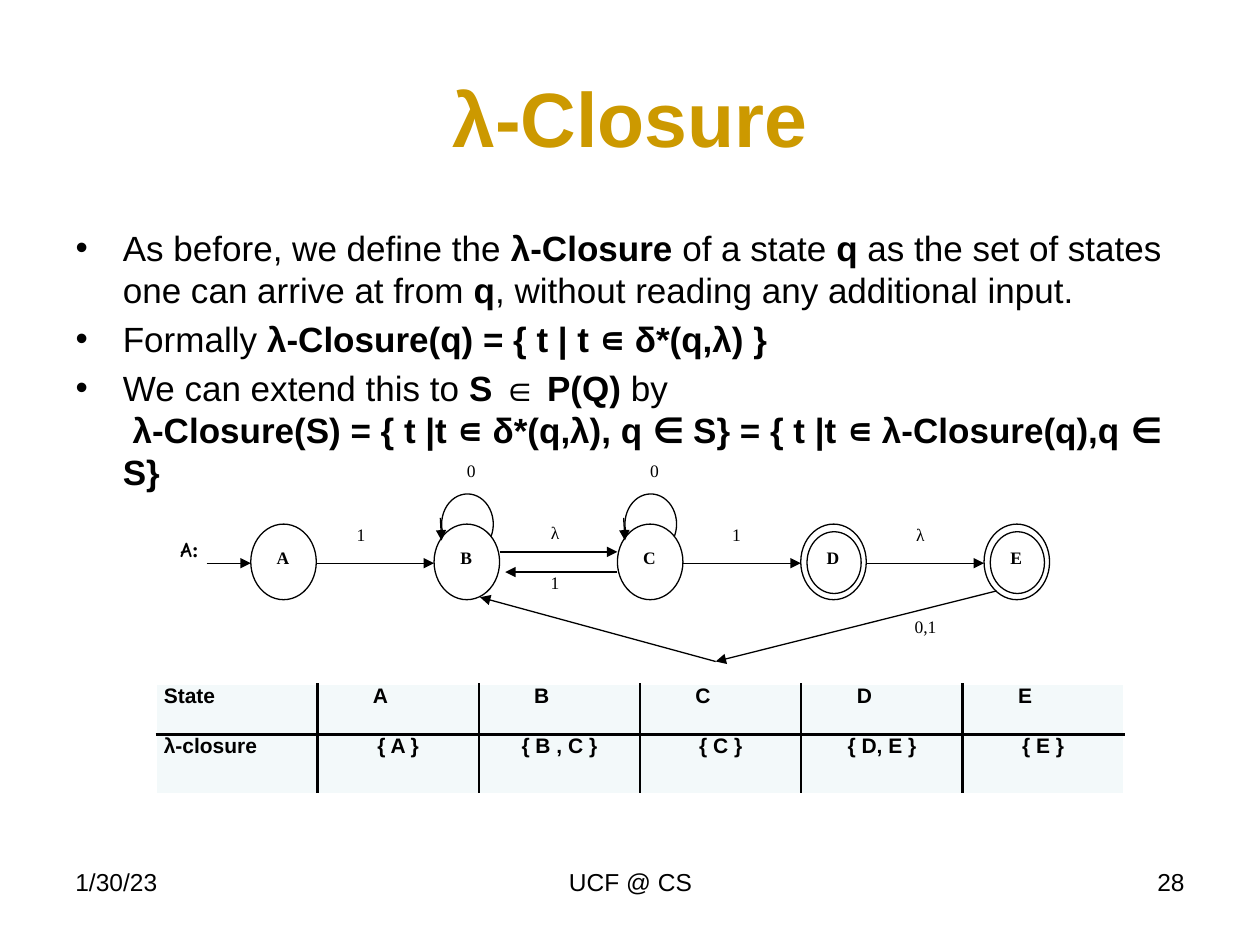
from lxml.etree import SubElement
from pptx import Presentation
from pptx.dml.color import RGBColor
from pptx.enum.shapes import MSO_CONNECTOR, MSO_SHAPE
from pptx.enum.text import MSO_ANCHOR, MSO_AUTO_SIZE, PP_ALIGN
from pptx.oxml import parse_xml
from pptx.oxml.ns import nsdecls, qn
from pptx.util import Inches, Pt

COLORS = {"title": "CC9900", "ink": "000000", "paper": "FFFFFF", "cell": "F3F9FA"}

# Bold passages stand between double asterisks.
BULLETS = [
    "As before, we define the **λ-Closure** of a state **q** as the set of states "
    "one can arrive at from **q**, without reading any additional input.",
    "Formally **λ-Closure(q) = { t | t ∊ δ*(q,λ) }**",
    "We can extend this to **S ∈ P(Q) **by\n **λ-Closure(S) = "
    "{ t |t ∊ δ*(q,λ), q ∈ S} = { t |t ∊ λ-Closure(q),q ∈ S}**",
]
CLOSURES = {"A": "{ A }", "B": "{ B , C }", "C": "{ C }", "D": "{ D, E }", "E": "{ E }"}
ACCEPTING = "DE"
LOOPING = "BC"

STATE_TOP, STATE_WIDTH, STATE_HEIGHT = 4.16, 0.52, 0.6
FIRST_STATE, LAST_STATE = 1.99, 7.81
STATE_STEP = (LAST_STATE - FIRST_STATE) / (len(CLOSURES) - 1)
STATE_LEFT = {s: FIRST_STATE + i * STATE_STEP for i, s in enumerate(CLOSURES)}
AXIS = 4.47


def rgb(name):
    return RGBColor.from_string(COLORS[name])


def style(font, size, face="Arial", color="ink", bold=False):
    font.size, font.name, font.bold = Pt(size), face, bold
    font.color.rgb = rgb(color)


def place(shape, left, top, width, height):
    shape.left, shape.top = Inches(left), Inches(top)
    shape.width, shape.height = Inches(width), Inches(height)


def add_label(shapes, text, box, size, face="Arial", bold=False,
              align=PP_ALIGN.CENTER, inset=True):
    label = shapes.add_textbox(*map(Inches, box))
    frame = label.text_frame
    frame.word_wrap = True
    if not inset:
        frame.margin_left = frame.margin_right = 0
        frame.margin_top = frame.margin_bottom = 0
    frame.text = text
    paragraph = frame.paragraphs[0]
    paragraph.alignment = align
    style(paragraph.runs[0].font, size, face, bold=bold)
    return paragraph


def add_circle(shapes, left, top, width, height):
    circle = shapes.add_shape(MSO_SHAPE.OVAL, *map(Inches, (left, top, width, height)))
    circle.shadow.inherit = False
    circle.fill.solid()
    circle.fill.fore_color.rgb = rgb("paper")
    circle.line.color.rgb = rgb("ink")
    circle.line.width = Pt(0.75)


def add_arrow(shapes, start, end):
    arrow = shapes.add_connector(MSO_CONNECTOR.STRAIGHT, *map(Inches, (*start, *end)))
    arrow.line.color.rgb = rgb("ink")
    arrow.line.width = Pt(0.75)
    SubElement(arrow.line._get_or_add_ln(), qn("a:tailEnd"), type="triangle")
    SubElement(arrow._element.spPr, qn("a:effectLst"))


def add_title(slide):
    title = slide.shapes.title
    place(title, 0.5, 0.3, 9, 1.25)
    title.text_frame.text = "λ-Closure"
    title.text_frame.vertical_anchor = MSO_ANCHOR.MIDDLE
    paragraph = title.text_frame.paragraphs[0]
    paragraph.alignment = PP_ALIGN.CENTER
    style(paragraph.runs[0].font, 44, color="title", bold=True)


def add_bullets(slide):
    body = slide.placeholders[1]
    place(body, 0.5, 1.75, 9, 4.95)
    frame = body.text_frame
    frame.auto_size = MSO_AUTO_SIZE.NONE
    for number, bullet in enumerate(BULLETS):
        paragraph = frame.add_paragraph() if number else frame.paragraphs[0]
        paragraph.space_before = Pt(4 if number else 0)
        for part, passage in enumerate(bullet.split("**")):
            for line, text in enumerate(passage.split("\n")):
                if line:
                    paragraph.add_line_break()
                if text:
                    run = paragraph.add_run()
                    run.text = text
                    style(run.font, 20, bold=part % 2 == 1)


def add_states(shapes):
    for state in LOOPING:
        add_circle(shapes, STATE_LEFT[state] + 0.06, 3.92, 0.41, 0.48)
    for state, left in STATE_LEFT.items():
        add_circle(shapes, left, STATE_TOP, STATE_WIDTH, STATE_HEIGHT)
        if state in ACCEPTING:
            add_circle(shapes, left + 0.05, STATE_TOP + 0.06, 0.43, 0.49)
        add_label(shapes, state, (left + 0.06, 4.29, 0.39, 0.38), 10,
                  "Times New Roman", bold=True)


def add_transitions(shapes):
    add_arrow(shapes, (1.64, AXIS), (STATE_LEFT["A"], AXIS))
    for source, target, height in (("A", "B", AXIS), ("B", "C", 4.38),
                                   ("C", "D", AXIS), ("D", "E", AXIS)):
        add_arrow(shapes, (STATE_LEFT[source] + STATE_WIDTH, height),
                  (STATE_LEFT[target], height))
    add_arrow(shapes, (STATE_LEFT["C"], 4.54), (4.01, 4.54))

    corner = (5.68, 5.25)
    add_arrow(shapes, (7.91, 4.69), corner)
    add_arrow(shapes, corner, (3.81, 4.74))

    symbols = [("1", 2.76, 4.16), ("λ", 4.3, 4.14), ("1", 4.3, 4.54),
               ("1", 5.74, 4.16), ("λ", 7.2, 4.16), ("0,1", 7.24, 4.89)]
    for state in LOOPING:
        left = STATE_LEFT[state]
        add_arrow(shapes, (left + 0.05, 4.11), (left + 0.06, 4.29))
        symbols.append(("0", left + 0.19, 3.65))
    for symbol, left, top in symbols:
        add_label(shapes, symbol, (left, top, 0.21, 0.25), 10,
                  "Times New Roman", inset=False)


def add_automaton(slide):
    shapes = slide.shapes.add_group_shape().shapes
    add_states(shapes)
    add_transitions(shapes)
    name = add_label(shapes, "A", (1.27, 4.21, 0.47, 0.38), 12, "Comic Neue", bold=True)
    colon = name.add_run()
    colon.text = ":"
    style(colon.font, 12, "Times New Roman", bold=True)


def set_borders(cell, inner_sides):
    """Draw black rules on the inner sides of a cell and white ones elsewhere."""
    properties = cell._tc.get_or_add_tcPr()
    for position, side in enumerate("LRTB"):
        color, width = ("ink", 1.5) if side in inner_sides else ("paper", 1)
        properties.insert(position, parse_xml(
            f'<a:ln{side} {nsdecls("a")} w="{Pt(width)}"><a:solidFill>'
            f'<a:srgbClr val="{COLORS[color]}"/></a:solidFill></a:ln{side}>'))


def add_closure_table(slide):
    rows = [["State", *CLOSURES], ["λ-closure", *CLOSURES.values()]]
    last = len(CLOSURES)
    table = slide.shapes.add_table(
        len(rows), last + 1, *map(Inches, (1.24, 5.43, 7.68, 0.87))).table
    table.first_row = table.horz_banding = False
    for row, height in zip(table.rows, (0.4, 0.47)):
        row.height = Inches(height)
    for r, texts in enumerate(rows):
        for c, text in enumerate(texts):
            cell = table.cell(r, c)
            cell.margin_left = cell.margin_right = Inches(0.06)
            cell.margin_top = cell.margin_bottom = 0
            cell.fill.solid()
            cell.fill.fore_color.rgb = rgb("cell")
            set_borders(cell, ("L" if c else "") + ("R" if c < last else "")
                        + ("T" if r else "B"))
            cell.text_frame.text = text
            paragraph = cell.text_frame.paragraphs[0]
            if c and r:
                paragraph.alignment = PP_ALIGN.CENTER
            elif c:
                paragraph._p.get_or_add_pPr().set("marL", str(Inches(0.38)))
            style(paragraph.runs[0].font, 12, bold=True)


def add_footer(slide):
    for text, left, width, align in (("1/30/23", 0.5, 2.33, PP_ALIGN.LEFT),
                                     ("UCF @ CS", 3.42, 3.17, PP_ALIGN.CENTER),
                                     ("28", 7.17, 2.33, PP_ALIGN.RIGHT)):
        add_label(slide.shapes, text, (left, 6.83, width, 0.52), 14, align=align)


def main():
    deck = Presentation()
    deck.slide_width, deck.slide_height = Inches(10), Inches(7.5)
    slide = deck.slides.add_slide(deck.slide_layouts[1])
    add_title(slide)
    add_bullets(slide)
    add_footer(slide)
    add_automaton(slide)
    add_closure_table(slide)
    deck.save("out.pptx")


if __name__ == "__main__":
    main()
